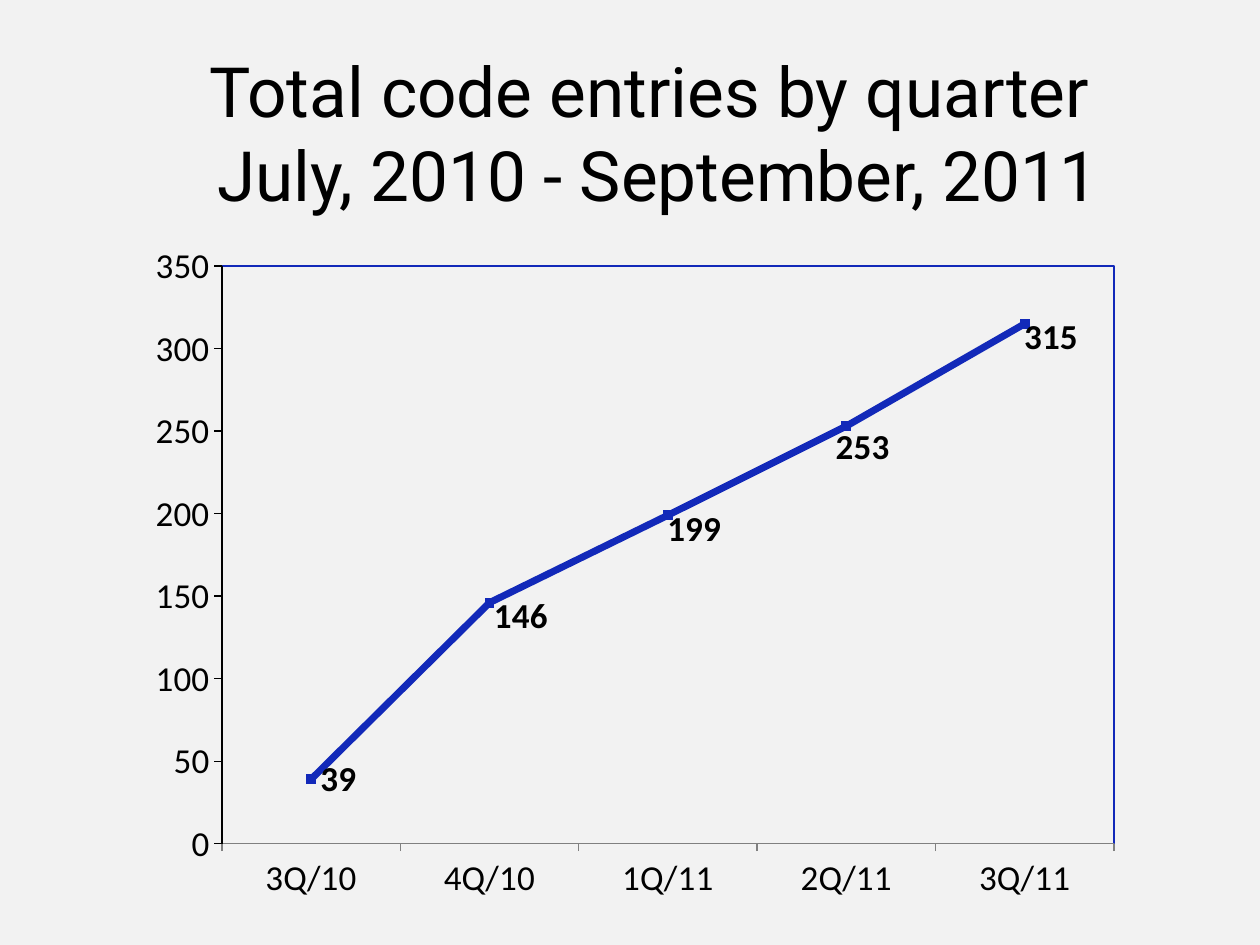
from lxml import etree
from pptx import Presentation
from pptx.chart.data import CategoryChartData as Data
from pptx.dml.color import RGBColor
from pptx.enum.chart import XL_CHART_TYPE as Kind, XL_LABEL_POSITION as Pos
from pptx.enum.chart import XL_MARKER_STYLE as Mark, XL_TICK_MARK as Tick
from pptx.enum.text import MSO_ANCHOR as Anchor, PP_ALIGN as Align
from pptx.oxml import parse_xml
from pptx.oxml.ns import nsdecls, qn
from pptx.util import Inches, Pt

PAPER = RGBColor(0xF2, 0xF2, 0xF2)
BLACK = RGBColor(0, 0, 0)
BLUE = RGBColor(0x12, 0x29, 0xB9)
GREY = RGBColor(0x80, 0x80, 0x80)

TOTALS = {"3Q/10": 39, "4Q/10": 146, "1Q/11": 199, "2Q/11": 253, "3Q/11": 315}
# Label shifts from the right-hand position, as shares of the chart size
SHIFTS = {1: (-0.005, 0.02), 2: (-0.01, 0.02), 3: (-0.02, 0.03), 4: (-0.01, 0.02)}


def style(font, size, name="Calibri", bold=False):
    font.size, font.name, font.bold = Pt(size), name, bold
    font.color.rgb = BLACK


def layout(x, y, w=None, h=None):
    """Make a manual layout: a label shift, or an inner plot area with a size."""
    item = parse_xml(f"<c:layout {nsdecls('c')}><c:manualLayout/></c:layout>")
    parts = {"x": x, "y": y}
    if w is not None:
        parts = {"layoutTarget": "inner", "xMode": "edge", "yMode": "edge",
                 **parts, "w": w, "h": h}
    for tag, val in parts.items():
        etree.SubElement(item[0], qn(f"c:{tag}")).set("val", str(val))
    return item


def add_title(slide, lines):
    box = slide.shapes.add_textbox(Inches(0.81), Inches(0.42), Inches(8.69), Inches(1.25))
    frame = box.text_frame
    frame.word_wrap = True
    frame.vertical_anchor = Anchor.MIDDLE
    para = frame.paragraphs[0]
    para.text = "\v".join(lines)
    para.alignment = Align.CENTER
    style(para.font, 39.6, "Roboto")


def set_axis(axis, color):
    axis.has_major_gridlines = False
    axis.major_tick_mark = Tick.OUTSIDE
    axis.minor_tick_mark = Tick.NONE
    axis.format.line.color.rgb = color
    axis.format.line.width = Pt(0.75)
    style(axis.tick_labels.font, 20)


def set_plot(chart):
    """Place the plot area and give it a thin frame."""
    area = chart._chartSpace.chart.plotArea
    for old in area.findall(qn("c:layout")):
        area.remove(old)
    area.insert(0, layout(0.086, 0.052, 0.894, 0.846))
    area.append(parse_xml(
        f"<c:spPr {nsdecls('c', 'a')}><a:noFill/><a:ln w='9525'><a:solidFill>"
        f"<a:srgbClr val='{BLUE}'/></a:solidFill></a:ln></c:spPr>"))


def set_line(line):
    line.smooth = False
    line.format.line.color.rgb = BLUE
    line.format.line.width = Pt(4)
    line.marker.style, line.marker.size = Mark.SQUARE, 5
    fill = line.marker.format.fill
    fill.solid()
    fill.fore_color.rgb = BLUE
    line.marker.format.line.color.rgb = BLUE


def set_labels(line):
    labels = line.data_labels
    labels.show_value = True
    labels.position = Pos.RIGHT
    style(labels.font, 20, bold=True)
    for idx, shift in SHIFTS.items():
        label = line.points[idx].data_label
        style(label.font, 20, bold=True)
        label.position = Pos.RIGHT
    for item in line._element.iter(qn("c:dLbl")):
        mark = item.find(qn("c:idx"))
        mark.addnext(layout(*SHIFTS[int(mark.get("val"))]))


def add_graph(slide):
    data = Data()
    data.categories = list(TOTALS)
    data.add_series("Series 1", list(TOTALS.values()))
    chart = slide.shapes.add_chart(
        Kind.LINE_MARKERS_STACKED, Inches(1.08), Inches(1.83),
        Inches(7.92), Inches(5.42), data).chart
    chart.has_legend = chart.has_title = False
    style(chart.font, 20)
    chart.plots[0].vary_by_categories = False
    set_plot(chart)
    # Axes
    set_axis(chart.category_axis, GREY)
    scale = chart.value_axis
    set_axis(scale, BLACK)
    scale.minimum_scale, scale.maximum_scale, scale.major_unit = 0, 350, 50
    # Series
    line = chart.plots[0].series[0]
    set_line(line)
    set_labels(line)


def main():
    deck = Presentation()
    deck.slide_width, deck.slide_height = Inches(10), Inches(7.5)
    slide = deck.slides.add_slide(deck.slide_layouts[6])
    back = slide.background.fill
    back.solid()
    back.fore_color.rgb = PAPER
    add_title(slide, ["Total code entries by quarter", " July, 2010 - September, 2011"])
    add_graph(slide)
    deck.save("out.pptx")


if __name__ == "__main__":
    main()
